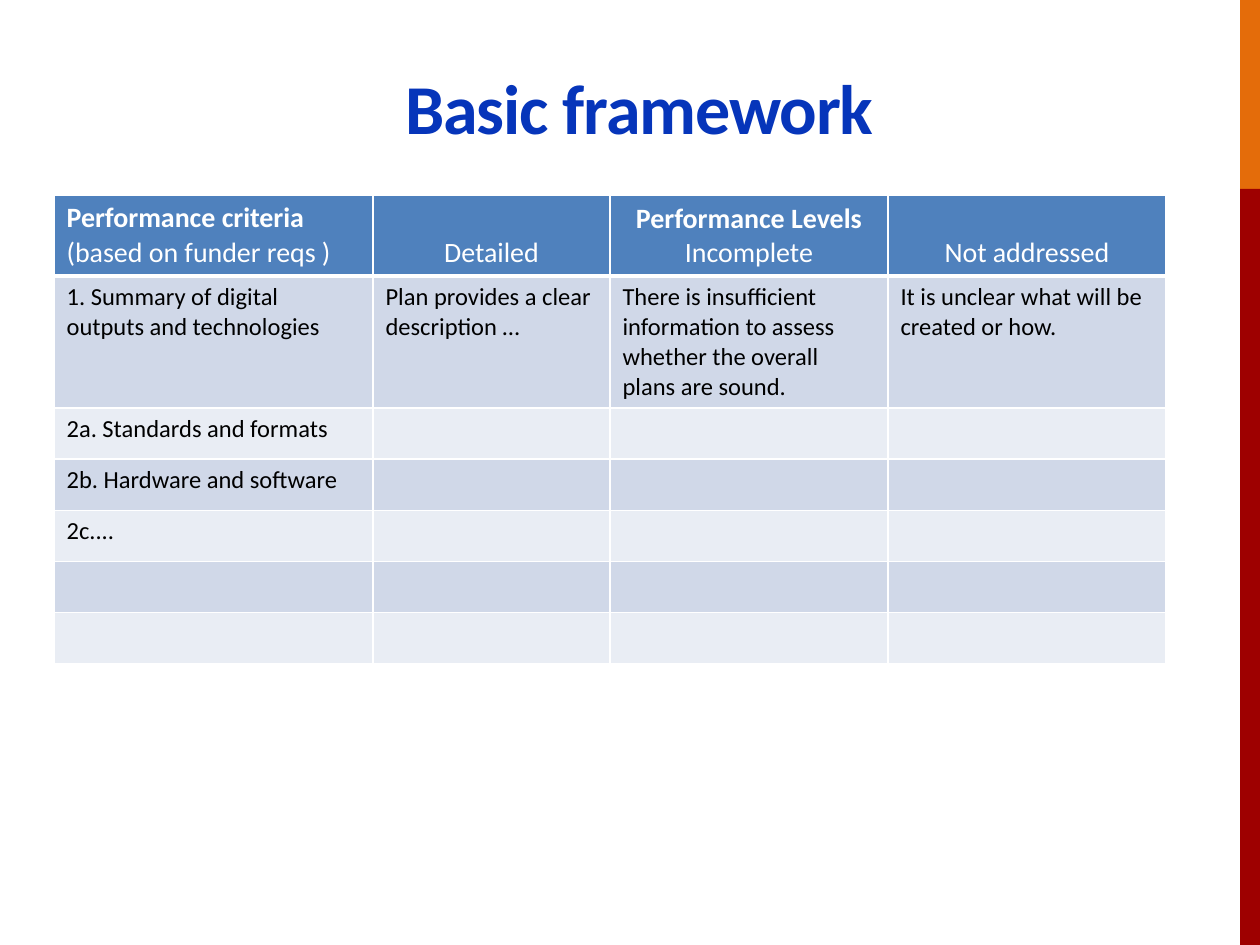
from lxml import etree
from pptx import Presentation
from pptx.dml.color import RGBColor
from pptx.enum.shapes import MSO_SHAPE
from pptx.enum.text import MSO_ANCHOR, PP_ALIGN
from pptx.oxml.ns import qn
from pptx.util import Emu, Pt

RECTANGLE = MSO_SHAPE.RECTANGLE
TOP, BOTTOM = MSO_ANCHOR.TOP, MSO_ANCHOR.BOTTOM
LEFT, CENTER = PP_ALIGN.LEFT, PP_ALIGN.CENTER

WHITE = RGBColor(0xFF, 0xFF, 0xFF)
BLACK = RGBColor(0x00, 0x00, 0x00)
TITLE_BLUE = RGBColor(0x06, 0x35, 0xBA)
HEADER_BLUE = RGBColor(0x4F, 0x81, 0xBD)
BANDS = (RGBColor(0xD0, 0xD8, 0xE8), RGBColor(0xE9, 0xED, 0xF4))
ORANGE = RGBColor(0xE4, 0x6C, 0x0A)
DARK_RED = RGBColor(0x9E, 0x00, 0x00)

FONT = "Calibri"
PX_PER_INCH = 126
PAGE_WIDTH, PAGE_HEIGHT = 1260, 945
STRIPE_LEFT, STRIPE_SPLIT = 1240, 189

COLUMN_WIDTHS = (319, 237, 278, 278)
ROW_HEIGHTS = (80, 132, 51, 51, 51, 51, 51)
# Each header cell: alignment, anchor, and its lines as (text, bold).
HEADER = (
    (LEFT, TOP, (("Performance criteria", True), ("(based on funder reqs )", False))),
    (CENTER, BOTTOM, (("Detailed", False),)),
    (CENTER, BOTTOM, (("Performance Levels", True), ("Incomplete", False))),
    (CENTER, BOTTOM, (("Not addressed", False),)),
)
CRITERIA = (
    (
        "1. Summary of digital outputs and technologies",
        "Plan provides a clear description …",
        "There is insufficient information to assess whether the overall plans are sound.",
        "It is unclear what will be created or how.",
    ),
    ("2a. Standards and formats",),
    ("2b. Hardware and software",),
    ("2c....",),
)


def px(length):
    return Emu(round(length * 914400 / PX_PER_INCH))


class SlideBuilder:
    def __init__(self, page):
        self.page = page

    def style(self, para, size, color, bold=False, align=LEFT):
        para.alignment = align
        font = para.font
        font.name, font.size, font.bold = FONT, Pt(size), bold
        font.color.rgb = color

    def bar(self, left, top, width, height, color):
        shape = self.page.shapes.add_shape(
            RECTANGLE, px(left), px(top), px(width), px(height))
        shape.shadow.inherit = False
        shape.fill.solid()
        shape.fill.fore_color.rgb = color
        shape.line.fill.background()

    def title(self, text, left, top, width, height):
        box = self.page.shapes.title
        box.left, box.top = px(left), px(top)
        box.width, box.height = px(width), px(height)
        frame = box.text_frame
        frame.text = text
        frame.vertical_anchor = BOTTOM
        para = frame.paragraphs[0]
        self.style(para, 40, TITLE_BLUE, True, CENTER)
        # Letter spacing in hundredths of a point.
        para.runs[0].font._element.set("spc", "-60")

    def table(self, left, top):
        table = self.page.shapes.add_table(
            len(ROW_HEIGHTS), len(COLUMN_WIDTHS), px(left), px(top),
            px(sum(COLUMN_WIDTHS)), px(sum(ROW_HEIGHTS))).table
        for column, width in zip(table.columns, COLUMN_WIDTHS):
            column.width = px(width)
        for row, height in zip(table.rows, ROW_HEIGHTS):
            row.height = px(height)
        return table

    def cell(self, cell, lines, fill, size, color, align=LEFT, anchor=TOP):
        """Fill a cell with lines given as (text, bold)."""
        cell.fill.solid()
        cell.fill.fore_color.rgb = fill
        cell.vertical_anchor = anchor
        cell.text = "\n".join(text for text, _ in lines)
        for para, (_, bold) in zip(cell.text_frame.paragraphs, lines):
            self.style(para, size, color, bold, align)

    def borders(self, cell, top=1, bottom=1):
        """Draw white cell borders, with widths in points."""
        properties = cell._tc.get_or_add_tcPr()
        widths = {"lnL": 1, "lnR": 1, "lnT": top, "lnB": bottom}
        for position, (tag, width) in enumerate(widths.items()):
            line = etree.Element(qn(f"a:{tag}"), w=str(Pt(width)))
            fill = etree.SubElement(line, qn("a:solidFill"))
            etree.SubElement(fill, qn("a:srgbClr"), val=str(WHITE))
            properties.insert(position, line)


def main():
    deck = Presentation()
    deck.slide_width, deck.slide_height = px(PAGE_WIDTH), px(PAGE_HEIGHT)
    title_only = deck.slide_layouts[5]
    slide = SlideBuilder(deck.slides.add_slide(title_only))

    stripe_width = PAGE_WIDTH - STRIPE_LEFT
    slide.bar(STRIPE_LEFT, 0, stripe_width, STRIPE_SPLIT, ORANGE)
    slide.bar(STRIPE_LEFT, STRIPE_SPLIT, stripe_width,
              PAGE_HEIGHT - STRIPE_SPLIT, DARK_RED)
    slide.title("Basic framework", 63, 60, 1153, 95)

    table = slide.table(54, 195)
    for column, (align, anchor, lines) in enumerate(HEADER):
        cell = table.cell(0, column)
        slide.cell(cell, lines, HEADER_BLUE, 16, WHITE, align, anchor)
        slide.borders(cell, bottom=3)
    for row in range(1, len(ROW_HEIGHTS)):
        texts = CRITERIA[row - 1] if row <= len(CRITERIA) else ()
        for column in range(len(COLUMN_WIDTHS)):
            cell = table.cell(row, column)
            lines = [(texts[column], False)] if column < len(texts) else []
            slide.cell(cell, lines, BANDS[(row - 1) % 2], 14, BLACK)
            slide.borders(cell, top=3 if row == 1 else 1)

    deck.save("out.pptx")


if __name__ == "__main__":
    main()
